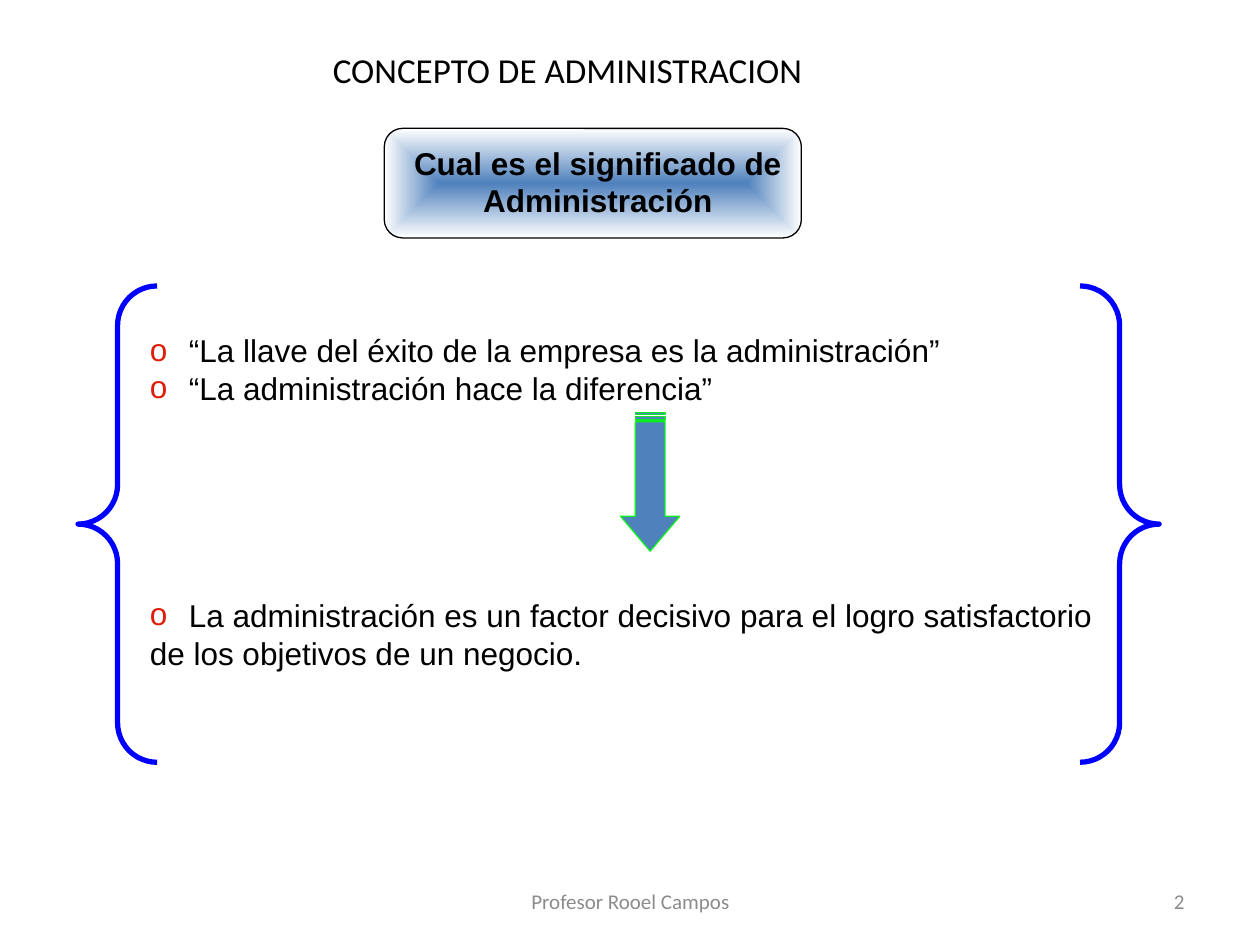
from lxml.etree import SubElement
from pptx import Presentation
from pptx.dml.color import RGBColor
from pptx.enum.shapes import MSO_SHAPE as Shape
from pptx.enum.text import MSO_ANCHOR as Anchor, PP_ALIGN as Align
from pptx.oxml import parse_xml
from pptx.oxml.ns import nsdecls, qn
from pptx.util import Pt

TITLE = "CONCEPTO DE ADMINISTRACION"
QUESTION = "Cual es el significado de Administración"
# text, bulleted, space before
IDEAS = [
    ("“La llave del éxito de la empresa es la administración”", True, 0),
    ("“La administración hace la diferencia”", True, 0),
    ("La administración es un factor decisivo para el logro satisfactorio", True, 108),
    ("de los objetivos de un negocio.", False, 0),
]
FOOTER = "Profesor Rooel Campos"
PAGE = "2"

COLORS = {"text": "000000", "blue": "4F81BD", "white": "FFFFFF", "brace": "0000FF",
          "bullet": "DC1E0A", "arrow_line": "0BEF21", "footer": "8C8C8C"}
BULLET_INDENT = 22.3


def rgb(name):
    return RGBColor.from_string(COLORS[name])


def add_run(paragraph, text, size, font="Arial", color="text", bold=False):
    run = paragraph.add_run()
    run.text = text
    run.font.size, run.font.name, run.font.bold = Pt(size), font, bold
    run.font.color.rgb = rgb(color)


def add_frame(box, anchor=Anchor.TOP):
    frame = slide.shapes.add_textbox(*map(Pt, box)).text_frame
    frame.word_wrap = True
    frame.vertical_anchor = anchor
    return frame


def add_line_of_text(box, text, align, anchor=Anchor.MIDDLE, **style):
    paragraph = add_frame(box, anchor).paragraphs[0]
    paragraph.alignment = align
    add_run(paragraph, text, **style)


def add_outline(kind, box, line, width, adjustments):
    shape = slide.shapes.add_shape(kind, *map(Pt, box))
    shape.shadow.inherit = False
    for i, value in enumerate(adjustments):
        shape.adjustments[i] = value
    shape.fill.background()
    shape.line.color.rgb = rgb(line)
    shape.line.width = Pt(width)
    return shape


def fill_from_center(shape, inner, outer):
    stops = "".join(f'<a:gs pos="{pos}"><a:srgbClr val="{COLORS[name]}"/></a:gs>'
                    for pos, name in ((0, inner), (100000, outer)))
    gradient = parse_xml(
        f'<a:gradFill {nsdecls("a")} rotWithShape="1"><a:gsLst>{stops}</a:gsLst>'
        '<a:path path="shape"><a:fillToRect l="50000" t="50000" r="50000" b="50000"/>'
        '</a:path></a:gradFill>')
    properties = shape._element.spPr
    properties.replace(properties.find(qn("a:noFill")), gradient)


def add_bullet(paragraph):
    properties = paragraph._p.get_or_add_pPr()
    properties.set("marL", str(Pt(BULLET_INDENT)))
    properties.set("indent", str(-Pt(BULLET_INDENT)))
    color = SubElement(properties, qn("a:buClr"))
    SubElement(color, qn("a:srgbClr"), val=COLORS["bullet"])
    SubElement(properties, qn("a:buFont"), typeface="Arial")
    SubElement(properties, qn("a:buChar"), char="o")


prs = Presentation()
prs.slide_width, prs.slide_height = Pt(720), Pt(540)
slide = prs.slides.add_slide(prs.slide_layouts[6])

# Title
add_line_of_text((54, 12.2, 540.7, 55.4), TITLE, Align.CENTER, size=20, font="Calibri")

# Question on its gradient panel
panel = add_outline(Shape.ROUNDED_RECTANGLE, (219.6, 73.4, 238.3, 62.6), "text", 0.75, [0.167])
fill_from_center(panel, "blue", "white")
add_line_of_text((224.6, 78.5, 234, 50.4), QUESTION, Align.CENTER, Anchor.TOP,
                 size=18, bold=True)

# Braces around the ideas
add_outline(Shape.DOUBLE_BRACE, (44.6, 163.4, 617.8, 272.2), "brace", 3, [0.083])

# Ideas
ideas = add_frame((78.5, 185.8, 572.4, 201.6))
for i, (text, bulleted, space) in enumerate(IDEAS):
    paragraph = ideas.paragraphs[0] if i == 0 else ideas.add_paragraph()
    paragraph.space_before = Pt(space)
    if bulleted:
        add_bullet(paragraph)
    add_run(paragraph, text, 18)

# Arrow from the sayings to the conclusion
arrow = add_outline(Shape.STRIPED_RIGHT_ARROW, (331.9, 258.5, 79.2, 33.8),
                    "arrow_line", 0.75, [0.5, 0.59])
arrow.rotation = 90
arrow.fill.solid()
arrow.fill.fore_color.rgb = rgb("blue")

# Footer and page number
small = {"size": 12, "font": "Calibri", "color": "footer"}
add_line_of_text((246.2, 500.4, 228.2, 28.8), FOOTER, Align.CENTER, **small)
add_line_of_text((516.2, 500.4, 167.8, 28.8), PAGE, Align.RIGHT, **small)

prs.save("out.pptx")
